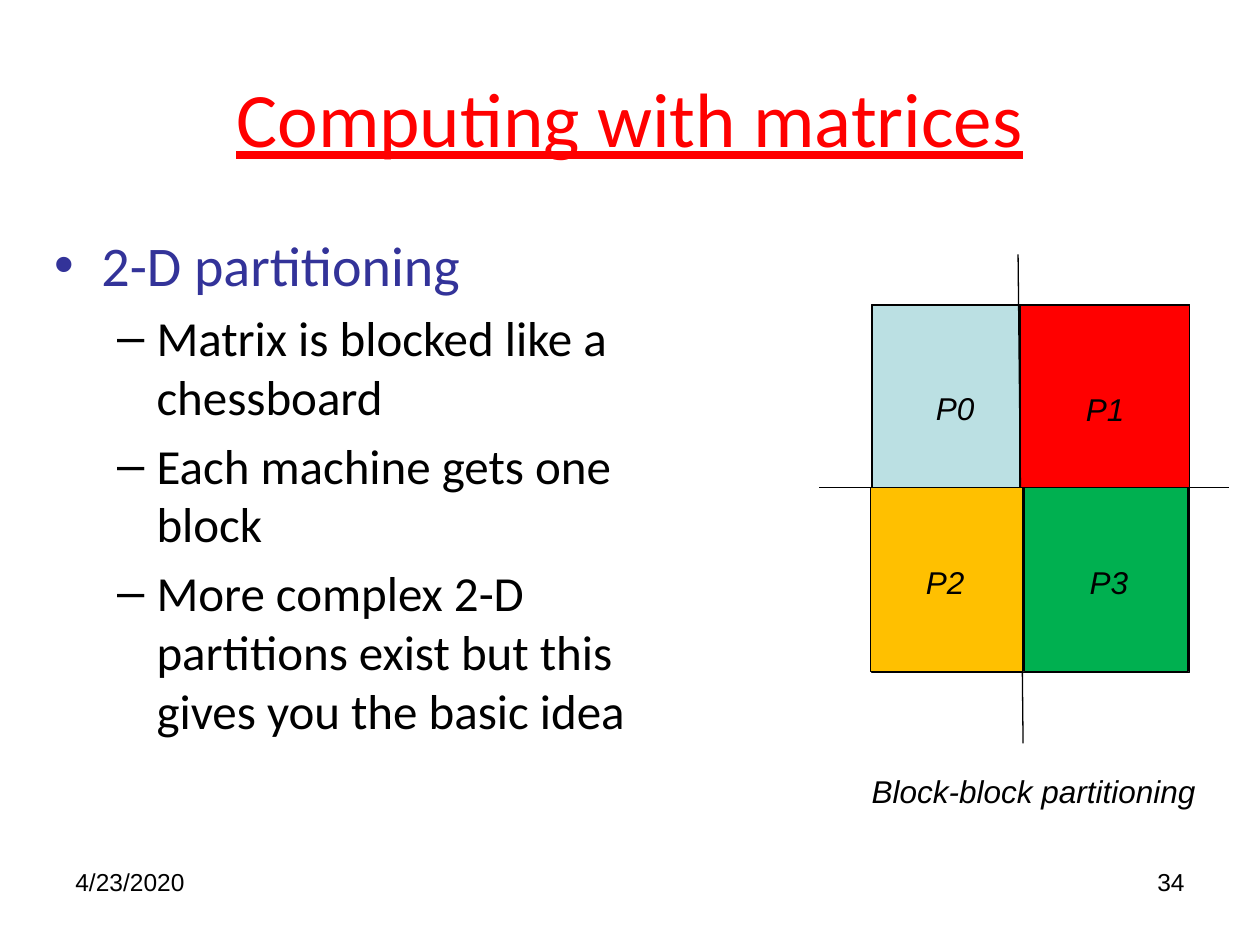
import pptx
import pptx.dml.color
import pptx.enum.shapes
import pptx.enum.text
import pptx.oxml.ns
import pptx.util
from dataclasses import dataclass
from lxml import etree
from pptx.util import Inches


@dataclass(frozen=True)
class Theme:
    heading_font: str = "Calibri"
    label_font: str = "Arial"
    title: str = "FF0000"
    topic: str = "333399"
    ink: str = "000000"
    p0: str = "BBE0E3"
    p1: str = "FF0000"
    p2: str = "FFC000"
    p3: str = "00B050"
    title_size: int = 44
    topic_size: int = 32
    point_size: int = 28
    label_size: int = 18
    footer_size: int = 14
    line_width: float = 0.75


theme = Theme()
rgb = pptx.dml.color.RGBColor.from_string
align = pptx.enum.text.PP_ALIGN


def style(paragraph, font_name, size, color):
    paragraph.font.name = font_name
    paragraph.font.size = pptx.util.Pt(size)
    paragraph.font.color.rgb = rgb(color)


def add_label(box, text, size, wrap=False):
    frame = slide.shapes.add_textbox(*map(Inches, box)).text_frame
    frame.word_wrap = wrap
    frame.text = text
    style(frame.paragraphs[0], theme.label_font, size, theme.ink)
    return frame.paragraphs[0]


deck = pptx.Presentation()
deck.slide_width, deck.slide_height = Inches(10), Inches(7.5)
slide = deck.slides.add_slide(deck.slide_layouts[1])

# Title
title = slide.shapes.title
title.left, title.top, title.width, title.height = map(Inches, (0.5, 0.3, 9, 1.25))
title.text_frame.text = "Computing with matrices"
heading = title.text_frame.paragraphs[0]
style(heading, theme.heading_font, theme.title_size, theme.title)
heading.font.underline = True

# Bullet list
body = slide.placeholders[1]
body.left, body.top, body.width, body.height = map(Inches, (0.33, 1.78, 5.49, 4.95))
body.text_frame.auto_size = pptx.enum.text.MSO_AUTO_SIZE.NONE
points = [
    "2-D partitioning",
    "Matrix is blocked like a chessboard",
    "Each machine gets one block",
    "More complex 2-D partitions exist but this gives you the basic idea",
]
body.text_frame.text = "\n".join(points)
topic, *details = body.text_frame.paragraphs
style(topic, theme.heading_font, theme.topic_size, theme.topic)
for detail in details:
    detail.level = 1
    style(detail, theme.heading_font, theme.point_size, theme.ink)

# Matrix blocks, its frame and the dividing lines, from back to front
matrix_parts = [
    ("block", (8.1, 2.42, 1.34, 1.46), theme.p1),
    ("block", (6.92, 2.42, 1.17, 1.46), theme.p0),
    ("block", (6.92, 2.42, 2.52, 2.92), None),
    ("divider", (6.5, 3.87, 9.75, 3.87), None),
    ("divider", (8.08, 2.02, 8.12, 5.9), None),
    ("block", (6.91, 3.87, 1.21, 1.46), theme.p2),
    ("block", (8.13, 3.87, 1.3, 1.46), theme.p3),
]
for kind, place, fill in matrix_parts:
    if kind == "block":
        part = slide.shapes.add_shape(
            pptx.enum.shapes.MSO_SHAPE.RECTANGLE, *map(Inches, place))
        part.shadow.inherit = False
        if fill:
            part.fill.solid()
            part.fill.fore_color.rgb = rgb(fill)
        else:
            part.fill.background()
    else:
        part = slide.shapes.add_connector(
            pptx.enum.shapes.MSO_CONNECTOR.STRAIGHT, *map(Inches, place))
    part.line.color.rgb = rgb(theme.ink)
    part.line.width = pptx.util.Pt(theme.line_width)
    if kind == "divider":
        etree.SubElement(part._element.spPr, pptx.oxml.ns.qn("a:effectLst"))

# Block names and caption
labels = [
    ("P0", (7.33, 3.04, 0.51, 0.4)),
    ("P1", (8.52, 3.05, 0.51, 0.4)),
    ("P2", (7.25, 4.42, 0.51, 0.4)),
    ("P3", (8.55, 4.42, 0.51, 0.4)),
    ("Block-block partitioning", (6.82, 6.08, 2.8, 0.4)),
]
for text, box in labels:
    add_label(box, text, theme.label_size).font.italic = True

# Date and slide number
add_label((0.5, 6.83, 2.33, 0.52), "4/23/2020", theme.footer_size, wrap=True)
number = add_label((7.17, 6.83, 2.33, 0.52), "34", theme.footer_size, wrap=True)
number.alignment = align.RIGHT

deck.save("out.pptx")
